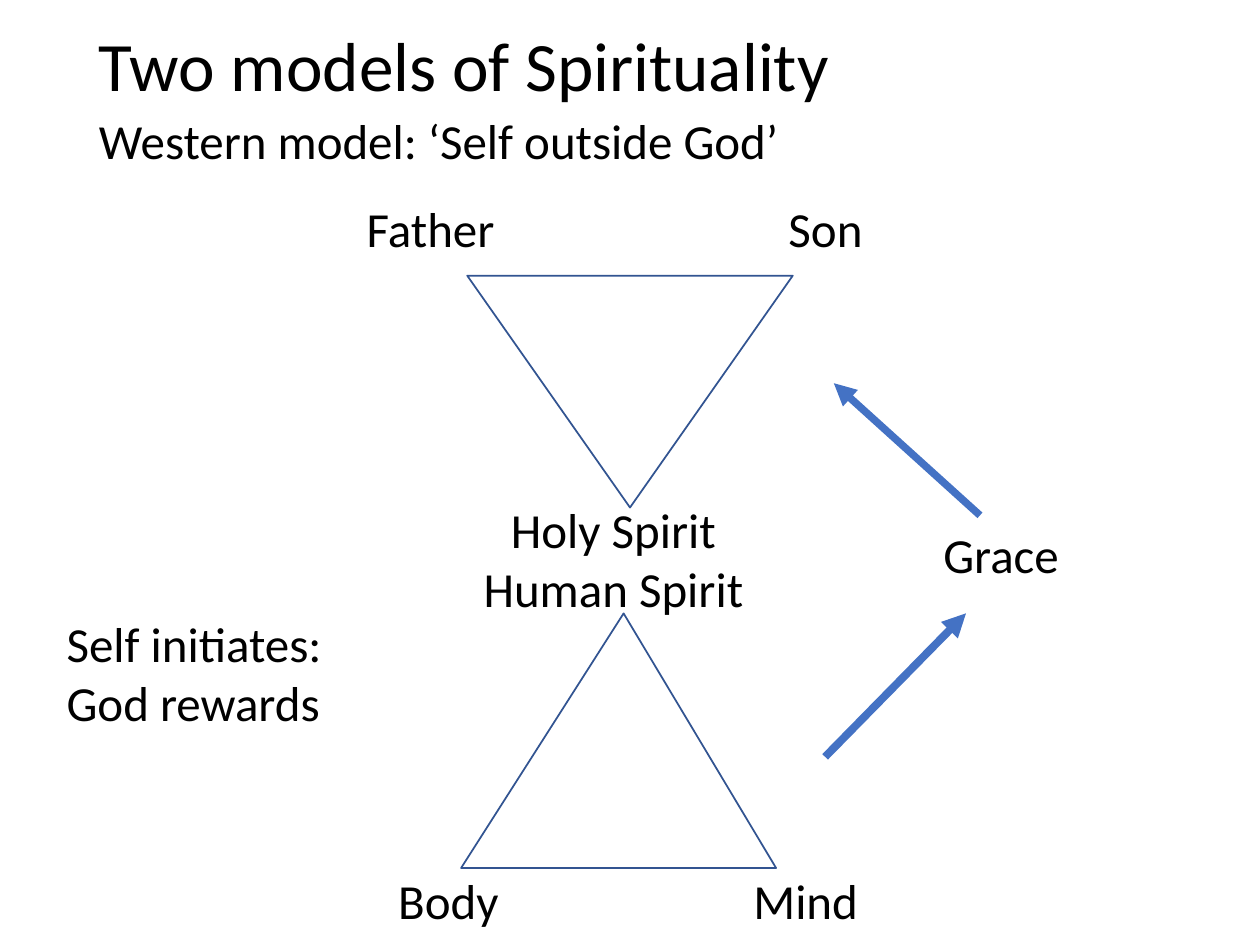
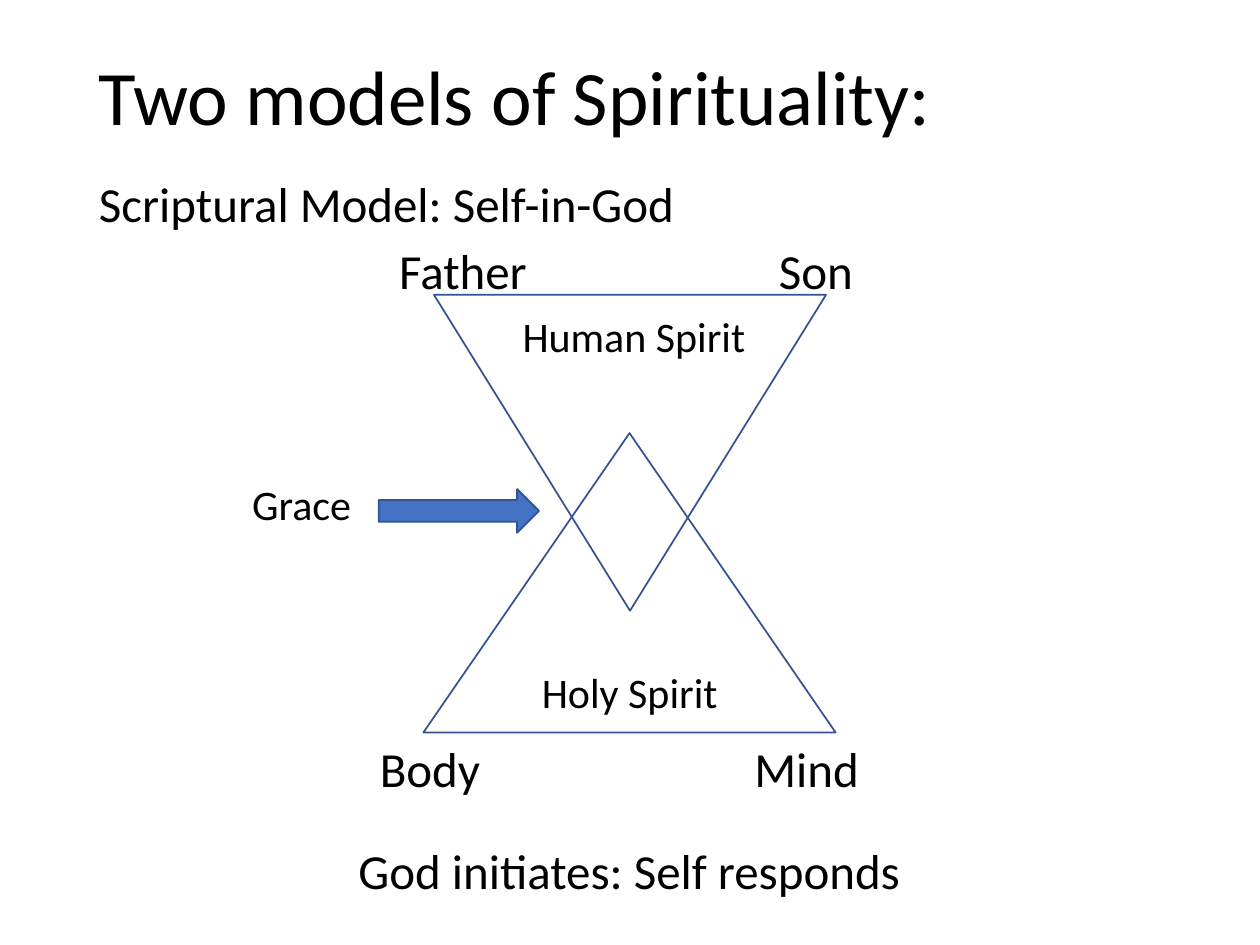
"""Build two slides that compare models of spirituality."""
from lxml import etree
from pptx import Presentation
from pptx.dml.color import RGBColor
from pptx.enum.shapes import MSO_CONNECTOR, MSO_SHAPE
from pptx.enum.text import MSO_ANCHOR, PP_ALIGN
from pptx.oxml.ns import qn
from pptx.util import Pt

LINE = MSO_CONNECTOR.STRAIGHT
PEAK, ARROW = MSO_SHAPE.ISOSCELES_TRIANGLE, MSO_SHAPE.RIGHT_ARROW
TOP, MID = MSO_ANCHOR.TOP, MSO_ANCHOR.MIDDLE
LEFT, MIDST = PP_ALIGN.LEFT, PP_ALIGN.CENTER

HUES = {"ink": "000000", "edge": "325491", "blue": "4472C4"}
TIGHT = {"line_spacing": 0.9}
LEAD = {"line_spacing": 0.9, "space_before": Pt(10)}


def hue(name):
    return RGBColor.from_string(HUES[name])


class Deck:
    def __init__(self, wide, high):
        self.show = Presentation()
        self.show.slide_width, self.show.slide_height = Pt(wide), Pt(high)
        self.page = None

    def start(self):
        self.page = self.show.slides.add_slide(self.show.slide_layouts[6]).shapes

    def text(self, words, box, size=28, align=LEFT, anchor=TOP, form=None, tab=None):
        frame = self.page.add_textbox(*map(Pt, box)).text_frame
        for key, value in {"word_wrap": True, "vertical_anchor": anchor}.items():
            setattr(frame, key, value)
        frame.text = words
        for para in frame.paragraphs:
            for key, value in {"alignment": align, **(form or {})}.items():
                setattr(para, key, value)
            for run in para.runs:
                for key, value in {"name": "Calibri", "size": Pt(size)}.items():
                    setattr(run.font, key, value)
                run.font.color.rgb = hue("ink")
            if tab:
                props = para._p.get_or_add_pPr()
                stops = etree.SubElement(props, qn("a:tabLst"))
                etree.SubElement(stops, qn("a:tab"), pos=str(Pt(tab)), algn="l")

    def head(self, words, box, size):
        self.text(words, box, size, anchor=MID, form=TIGHT)

    def lead(self, words, box):
        self.text(words, box, form=LEAD)

    def pair(self, first, second, box, tab):
        self.text(f"{first}\t{second}", box, tab=tab)

    def shape(self, kind, box, fill=None, turn=0, peak=None):
        item = self.page.add_shape(kind, *map(Pt, box))
        item.shadow.inherit = False
        item.rotation = turn
        if peak:
            item.adjustments[0] = peak
        if fill:
            item.fill.solid()
            item.fill.fore_color.rgb = hue(fill)
        else:
            item.fill.background()
        item.line.color.rgb = hue("edge")
        item.line.width = Pt(1)

    def arrow(self, start, end, width):
        item = self.page.add_connector(LINE, *map(Pt, start + end))
        item.line.color.rgb = hue("blue")
        item.line.width = Pt(width)
        etree.SubElement(item.line._get_or_add_ln(), qn("a:tailEnd"), type="triangle")
        etree.SubElement(item._element.spPr, qn("a:effectLst"))


def west(deck):
    deck.start()
    deck.head("Two models of Spirituality", (49.5, 16, 621, 47.5), 39.6)
    deck.lead("Western model: ‘Self outside God’", (49.5, 63.5, 621, 466.5))
    deck.shape(PEAK, (263.5, 350.5, 180, 145.5), peak=0.516)
    deck.shape(PEAK, (267, 157.5, 186, 132.5), turn=180)
    deck.pair("Father", "Son", (202.5, 110, 302.5, 41), 241)
    deck.text("Holy Spirit\nHuman Spirit", (141, 282, 419, 75), align=MIDST)
    deck.pair("Body", "Mind", (220.5, 494, 287.5, 41), 203)
    deck.text("Grace", (532, 296, 83.5, 41))
    deck.arrow((560, 294.5), (476.5, 219), 4.25)
    deck.arrow((471.5, 432.5), (552, 350.5), 4.5)
    deck.text("Self initiates: God rewards", (31, 347, 169, 75))


def script(deck):
    deck.start()
    deck.head("Two models of Spirituality:", (49.5, 27.5, 621, 60.5), 44)
    deck.lead("Scriptural Model: Self-in-God", (49.5, 99.5, 621, 428.5))
    deck.shape(PEAK, (248, 168.5, 224, 180.5), turn=180)
    deck.shape(PEAK, (242, 247.5, 235.5, 171))
    deck.pair("Father", "Son", (221, 134, 284.5, 41), 217)
    deck.text("Human Spirit", (291.5, 174, 142, 36), 24)
    deck.text("Holy Spirit", (302.5, 377.5, 131, 36), 24)
    deck.pair("Body", "Mind", (210, 418.5, 309.5, 41), 214)
    deck.text("Grace", (137, 270, 187, 36), 24)
    deck.shape(ARROW, (216.5, 279.5, 91.5, 25), fill="blue")
    deck.text("God initiates: Self responds", (187, 476.5, 345, 41), align=MIDST)


def main():
    deck = Deck(720, 540)
    west(deck)
    script(deck)
    deck.show.save("out.pptx")


if __name__ == "__main__":
    main()
